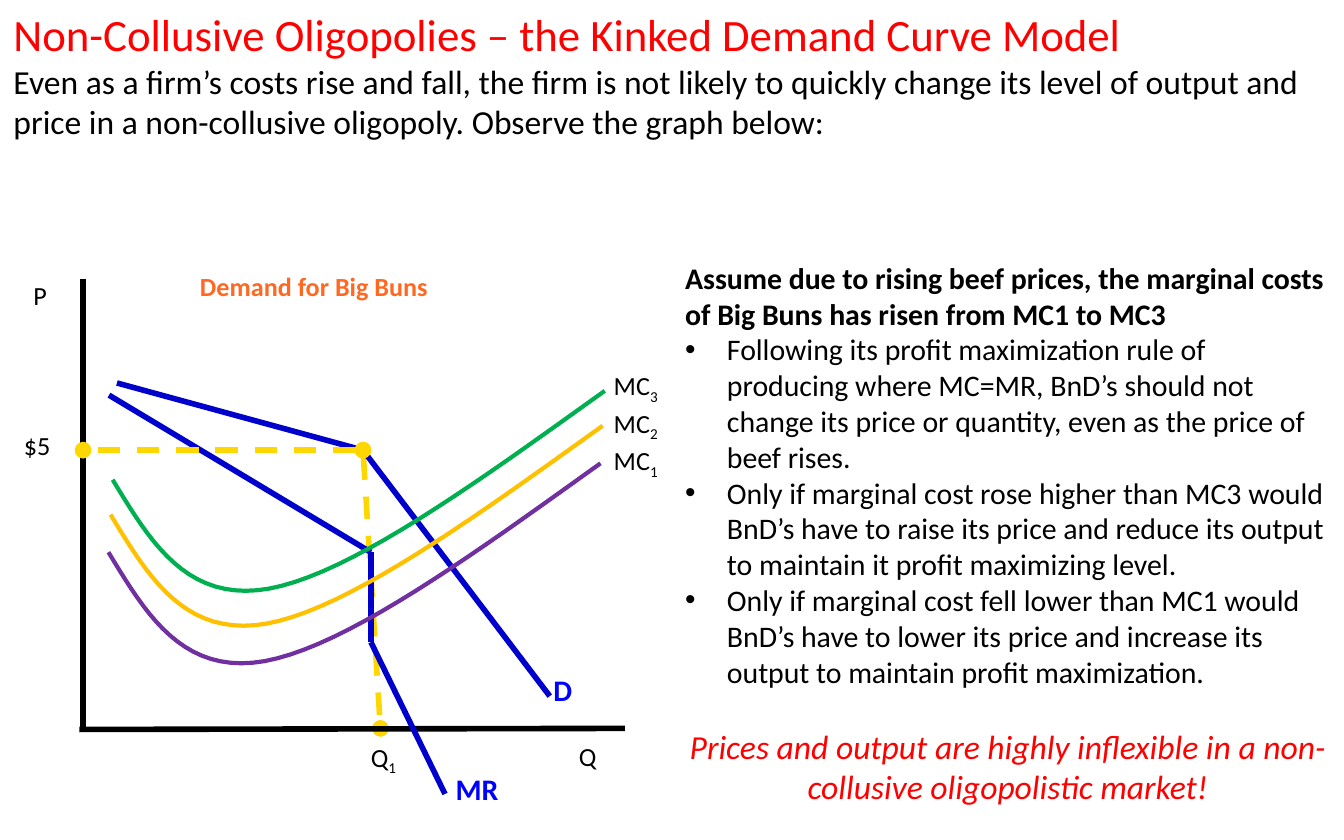
from itertools import pairwise

from lxml.etree import SubElement
from pptx import Presentation
from pptx.dml.color import RGBColor
from pptx.enum.dml import MSO_LINE
from pptx.enum.shapes import MSO_CONNECTOR
from pptx.enum.text import MSO_ANCHOR, MSO_AUTO_SIZE, PP_ALIGN
from pptx.oxml.ns import qn
from pptx.util import Cm, Pt

BLACK, RED, ORANGE, GOLD = "000000", "FF0000", "FF6820", "FFD700"
LINE_BLUE, LABEL_BLUE = "0000CC", "0000FF"


def color(value):
    return RGBColor.from_string(value)


def bezier(start, first, second, end, steps=20):
    for step in range(1, steps + 1):
        t = step / steps
        u = 1 - t
        yield tuple(
            u**3 * a + 3 * u * u * t * b + 3 * u * t * t * c + t**3 * d
            for a, b, c, d in zip(start, first, second, end)
        )


class GraphSlide:
    font = "Calibri"
    line_width = 3
    curve_width = 2.25

    def __init__(self, presentation):
        self.slide = presentation.slides.add_slide(presentation.slide_layouts[5])

    def run(self, paragraph, text, size, fill=BLACK, bold=False, italic=False, subscript=False):
        run = paragraph.add_run()
        run.text = text
        run.font.name = self.font
        run.font.size = Pt(size)
        run.font.bold = bold
        run.font.italic = italic
        run.font.color.rgb = color(fill)
        if subscript:
            run.font._element.set("baseline", "-25000")

    def bullet(self, paragraph, indent):
        properties = paragraph._p.get_or_add_pPr()
        properties.set("marL", str(indent))
        properties.set("indent", str(-indent))
        SubElement(properties, qn("a:buFont")).set("typeface", "Arial")
        SubElement(properties, qn("a:buChar")).set("char", "•")

    def heading(self, title, text):
        shape = self.slide.shapes.title
        shape.left, shape.top, shape.width, shape.height = Cm(0), Cm(0), Cm(25.4), Cm(2.82)
        frame = shape.text_frame
        frame.word_wrap = True
        frame.auto_size = MSO_AUTO_SIZE.NONE
        frame.vertical_anchor = MSO_ANCHOR.TOP
        paragraphs = frame.paragraphs[0], frame.add_paragraph()
        for paragraph in paragraphs:
            paragraph.alignment = PP_ALIGN.LEFT
        self.run(paragraphs[0], title, 24, RED)
        self.run(paragraphs[1], text, 18)

    def text_box(self, left, top, width, height):
        frame = self.slide.shapes.add_textbox(Cm(left), Cm(top), Cm(width), Cm(height)).text_frame
        frame.word_wrap = True
        frame.auto_size = MSO_AUTO_SIZE.SHAPE_TO_FIT_TEXT
        return frame

    def label(self, left, top, width, text, subscript="", size=14, fill=BLACK, bold=False):
        paragraph = self.text_box(left, top, width, 0.86).paragraphs[0]
        self.run(paragraph, text, size, fill, bold)
        if subscript:
            self.run(paragraph, subscript, size, fill, bold, subscript=True)

    def line(self, start, end, fill, guide=False):
        connector = self.slide.shapes.add_connector(
            MSO_CONNECTOR.STRAIGHT, *(Cm(value) for value in start + end)
        )
        connector.line.color.rgb = color(fill)
        connector.line.width = Pt(self.line_width)
        if guide:
            connector.line.dash_style = MSO_LINE.DASH
            outline = connector.line._get_or_add_ln()
            for ending in ("a:headEnd", "a:tailEnd"):
                SubElement(outline, qn(ending)).set("type", "oval")
        SubElement(connector._element.spPr, qn("a:effectLst"))

    def path_lines(self, points, fill):
        for start, end in pairwise(points):
            self.line(start, end, fill)

    def curve(self, points, shift, fill):
        moved = [(Cm(x + shift[0]), Cm(y + shift[1])) for x, y in points]
        builder = self.slide.shapes.build_freeform(*moved[0])
        builder.add_line_segments(moved[1:], close=False)
        shape = builder.convert_to_shape()
        shape.shadow.inherit = False
        shape.fill.background()
        shape.line.color.rgb = color(fill)
        shape.line.width = Pt(self.curve_width)

    def explanation(self, lead, bullets, conclusion):
        frame = self.text_box(12.7, 4.78, 12.7, 10.69)
        self.run(frame.paragraphs[0], lead, 16, bold=True)
        for text in bullets:
            paragraph = frame.add_paragraph()
            self.bullet(paragraph, Cm(0.79))
            self.run(paragraph, text, 16)
        paragraph = frame.add_paragraph()
        paragraph.alignment = PP_ALIGN.CENTER
        paragraph.space_before = Pt(19.5)
        self.run(paragraph, conclusion, 18, RED, italic=True)


def main():
    presentation = Presentation()
    presentation.slide_width, presentation.slide_height = Cm(25.4), Cm(15.88)
    graph = GraphSlide(presentation)
    graph.heading(
        "Non-Collusive Oligopolies – the Kinked Demand Curve Model",
        "Even as a firm’s costs rise and fall, the firm is not likely to quickly change its level "
        "of output and price in a non-collusive oligopoly. Observe the graph below:",
    )

    kink = (6.86, 8.51)
    graph.line(kink, (7.19, 13.77), GOLD, guide=True)
    graph.line((1.57, 5.28), (1.57, 13.79), BLACK)
    graph.line((1.5, 13.79), (11.81, 13.77), BLACK)
    graph.path_lines([(2.21, 7.24), kink, (10.39, 13.16)], LINE_BLUE)
    graph.path_lines([(2.06, 7.47), (7.01, 10.44), (7.01, 12.14), (8.41, 15.01)], LINE_BLUE)
    graph.line(kink, (1.57, 8.51), GOLD, guide=True)

    graph.label(0.38, 5.16, 1.42, "P")
    graph.label(10.69, 13.87, 1.57, "Q")
    graph.label(0.2, 8, 1.3, "$5")
    graph.label(6.76, 13.89, 1.65, "Q", "1")
    graph.label(10.21, 12.57, 1.88, "D", size=16, fill=LABEL_BLUE, bold=True)
    graph.label(8.36, 14.45, 2.31, "MR", size=16, fill=LABEL_BLUE, bold=True)
    graph.label(3.53, 4.98, 7.92, "Demand for Big Buns", fill=ORANGE, bold=True)

    start, bottom, end = (2.13, 9.07), (5.08, 11.13), (11.43, 7.39)
    cost_curve = [
        start,
        *bezier(start, (2.84, 10.24), (3.53, 11.4), bottom),
        *bezier(bottom, (6.63, 10.85), (9.02, 9.12), end),
    ]
    marginal_costs = [
        ("3", (0, 0), "00B050"),
        ("2", (-0.04, 0.66), "FFC000"),
        ("1", (-0.08, 1.37), "7030A0"),
    ]
    for index, (number, shift, fill) in enumerate(marginal_costs):
        graph.curve(cost_curve, shift, fill)
        graph.label(11.35, 6.86 + 0.71 * index, 2.31, "MC", number)

    graph.explanation(
        "Assume due to rising beef prices, the marginal costs of Big Buns has risen from MC1 to MC3",
        [
            "Following its profit maximization rule of producing where MC=MR, BnD’s should not "
            "change its price or quantity, even as the price of beef rises.",
            "Only if marginal cost rose higher than MC3 would BnD’s have to raise its price and "
            "reduce its output to maintain it profit maximizing level.",
            "Only if marginal cost fell lower than MC1 would BnD’s have to lower its price and "
            "increase its output to maintain profit maximization.",
        ],
        "Prices and output are highly inflexible in a non-collusive oligopolistic market!",
    )
    presentation.save("out.pptx")


if __name__ == "__main__":
    main()
